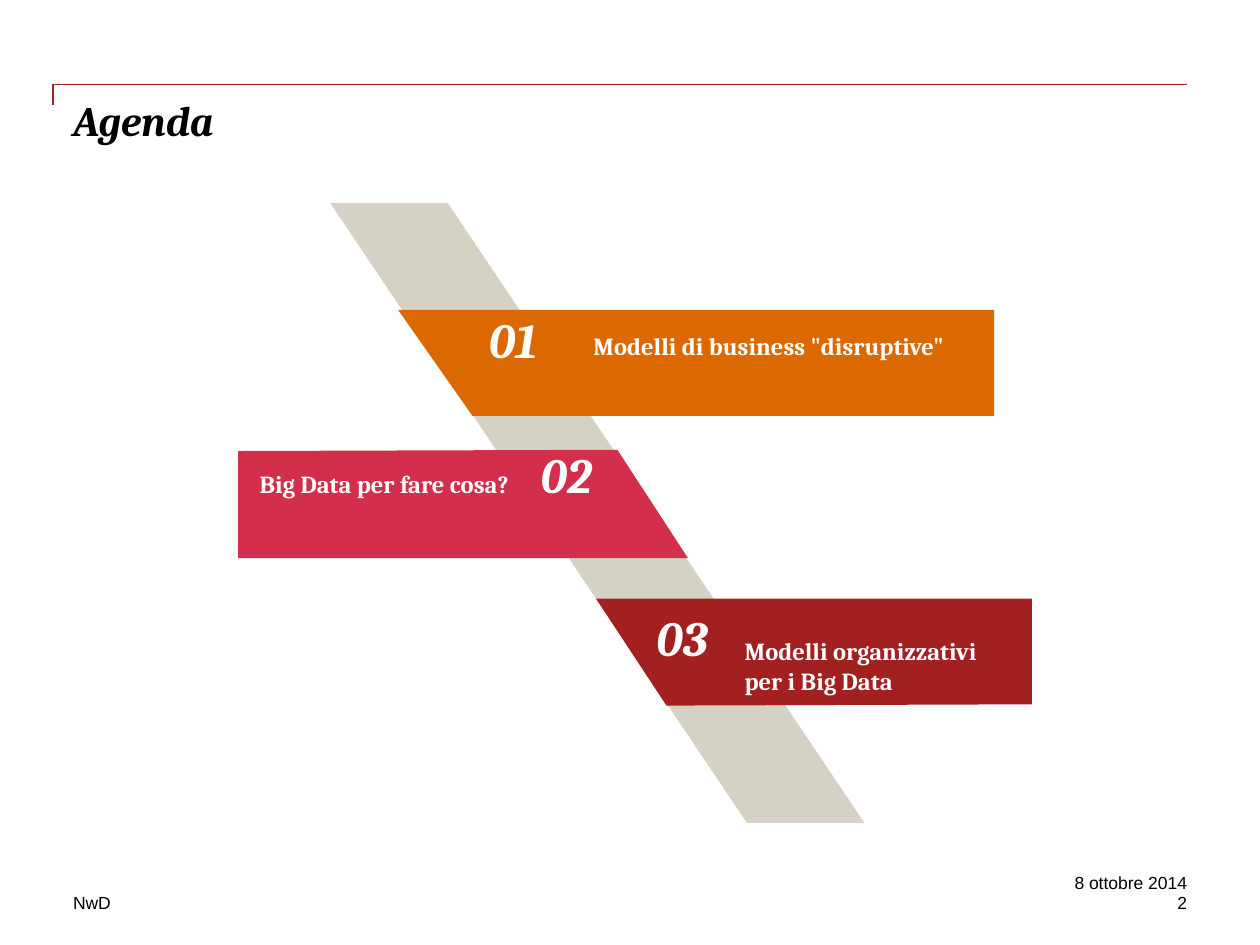
from dataclasses import dataclass

import pptx
import pptx.dml.color
import pptx.enum.shapes
import pptx.enum.text
import pptx.oxml.ns
import pptx.oxml.xmlchemy
import pptx.util

COLUMNS, ROWS = 100, 75
WIDTH, HEIGHT = pptx.util.Inches(10), pptx.util.Inches(7.5)


@dataclass(frozen=True)
class Theme:
    heading_font: str = "Cambria"
    footer_font: str = "Arial"
    title_size: int = 24
    number_size: int = 28
    topic_size: int = 14
    footer_size: int = 10
    black: str = "000000"
    white: str = "FFFFFF"
    ribbon: str = "D5D1C5"
    orange: str = "DC6900"
    rose: str = "D32E4B"
    red: str = "A32020"


THEME = Theme()


def column(count):
    return round(WIDTH * count / COLUMNS)


def row(count):
    return round(HEIGHT * count / ROWS)


def box(left, top, width, height):
    return column(left), row(top), column(width), row(height)


def rgb(colour):
    return pptx.dml.color.RGBColor.from_string(colour)


def paint(shape, colour):
    shape.shadow.inherit = False
    shape.fill.solid()
    shape.fill.fore_color.rgb = rgb(colour)
    shape.line.fill.background()


def add_text(slide, area, text, size, colour=THEME.white, font=THEME.heading_font,
             bold=True, italic=False, space_after=0, align=pptx.enum.text.PP_ALIGN.LEFT):
    frame = slide.shapes.add_textbox(*box(*area)).text_frame
    frame.word_wrap = True
    frame.margin_left = frame.margin_top = frame.margin_right = frame.margin_bottom = 0
    paragraph = frame.paragraphs[0]
    paragraph.text = text
    paragraph.alignment = align
    paragraph.space_after = pptx.util.Pt(space_after)
    paragraph.font.name = font
    paragraph.font.size = pptx.util.Pt(size)
    paragraph.font.bold = bold
    paragraph.font.italic = italic
    paragraph.font.color.rgb = rgb(colour)


def add_footer(slide, area, text, align=pptx.enum.text.PP_ALIGN.LEFT):
    add_text(slide, area, text, THEME.footer_size, THEME.black,
             THEME.footer_font, bold=False, align=align)


def add_rule(slide, start, end):
    rule = slide.shapes.add_connector(
        pptx.enum.shapes.MSO_CONNECTOR.STRAIGHT,
        column(start[0]), row(start[1]), column(end[0]), row(end[1]))
    rule.line.color.rgb = rgb(THEME.red)
    rule.line.width = pptx.util.Pt(1)
    properties = rule.element.spPr
    properties.append(properties.makeelement(pptx.oxml.ns.qn("a:effectLst"), {}))


def add_ribbon(slide):
    """Add the slanted band that runs behind the banners, leaning to the left."""
    ribbon = slide.shapes.add_shape(
        pptx.enum.shapes.MSO_SHAPE.PARALLELOGRAM, *box(26.2, 16.1, 42.4, 49.2))
    ribbon.adjustments[0] = 0.78
    ribbon.element.spPr.find(pptx.oxml.ns.qn("a:xfrm")).set("flipH", "1")
    paint(ribbon, THEME.ribbon)


def add_banner(slide, corners, colour):
    points = [(column(x), row(y)) for x, y in corners]
    builder = slide.shapes.build_freeform(*points[0])
    builder.add_line_segments(points[1:], close=True)
    paint(builder.convert_to_shape(), colour)


def add_agenda_item(slide, number, corners, colour, number_at, topic, topic_area):
    add_banner(slide, corners, colour)
    add_text(slide, (*number_at, 7.8, 5.5), number, THEME.number_size,
             italic=True, space_after=9)
    add_text(slide, topic_area, topic, THEME.topic_size, space_after=9)


def main():
    presentation = pptx.Presentation()
    presentation.slide_width, presentation.slide_height = WIDTH, HEIGHT
    slide = presentation.slides.add_slide(presentation.slide_layouts[6])

    frame_corner = (4.2, 6.7)
    for end in ((4.2, 8.3), (94.2, 6.7)):
        add_rule(slide, frame_corner, end)
    add_text(slide, (5.8, 7.5, 88.3, 10), "Agenda", THEME.title_size,
             THEME.black, italic=True)

    add_ribbon(slide)
    items = (
        ("01", ((31.6, 24.6), (78.9, 24.6), (78.9, 33), (37.5, 33)), THEME.orange,
         (38.8, 24.6), 'Modelli di business "disruptive"', (47.1, 26.3, 30.3, 5.4)),
        ("02", ((54.6, 44.3), (18.9, 44.3), (18.9, 35.8), (49, 35.7)), THEME.rose,
         (42.9, 35.3), "Big Data per fare cosa?", (20.6, 37.2, 22.8, 5.4)),
        ("03", ((47.3, 47.5), (81.9, 47.5), (81.9, 55.9), (52.9, 56)), THEME.red,
         (52.1, 48.2), "Modelli organizzativi per i Big Data", (59.1, 50.5, 21.7, 5.4)),
    )
    for item in items:
        add_agenda_item(slide, *item)

    right = pptx.enum.text.PP_ALIGN.RIGHT
    add_footer(slide, (5.8, 70.8, 28.3, 1.7), "NwD")
    add_footer(slide, (77.5, 70.8, 16.7, 1.7), "2", right)
    add_footer(slide, (77.5, 69.2, 16.7, 1.7), "8 ottobre 2014", right)

    presentation.save("out.pptx")


if __name__ == "__main__":
    main()
